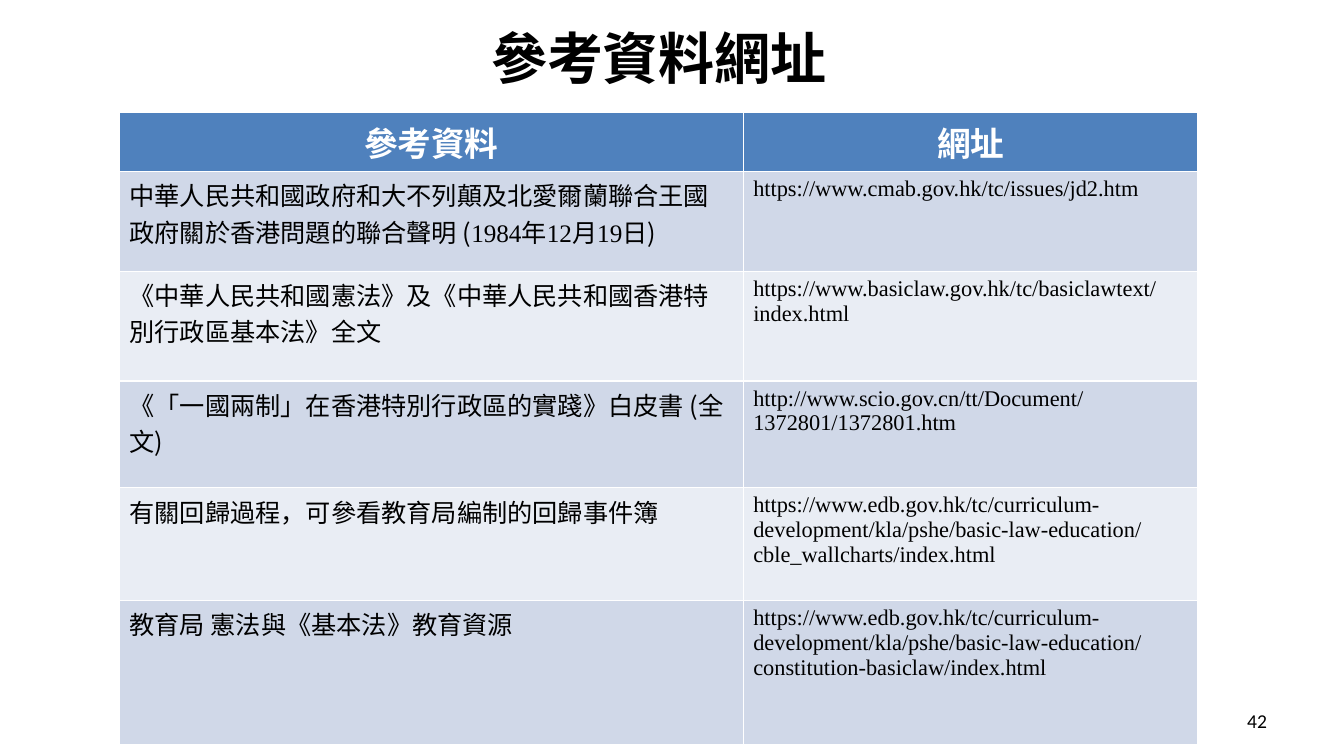
"""Build the slide of reference materials and their web addresses."""
from lxml import etree
from pptx import Presentation
from pptx.dml.color import RGBColor
from pptx.enum import text as t
from pptx.oxml import ns
from pptx.util import Cm, Pt

HAN, TIMES = "Noto Sans CJK SC", "Times New Roman"
TITLE = "參考資料網址"
HEADS = ["參考資料", "網址"]
ROWS = [
    ([("中華人民共和國政府和大不列顛及北愛爾蘭聯合王國政府關於香港問題的聯合聲明 (", HAN),
      ("1984年12月19日", TIMES), (")", HAN)],
     "https://www.cmab.gov.hk/tc/issues/jd2.htm"),
    ([("《中華人民共和國憲法》及《中華人民共和國香港特別行政區基本法》全文", HAN)],
     "https://www.basiclaw.gov.hk/tc/basiclawtext/index.html"),
    ([("《「一國兩制」在香港特別行政區的實踐》白皮書 (全文)", HAN)],
     "http://www.scio.gov.cn/tt/Document/1372801/1372801.htm"),
    ([("有關回歸過程，可參看教育局編制的回歸事件簿", HAN)],
     "https://www.edb.gov.hk/tc/curriculum-development/kla/pshe/basic-law-education/cble_wallcharts/index.html"),
    ([("教育局 憲法與《基本法》教育資源", HAN)],
     "https://www.edb.gov.hk/tc/curriculum-development/kla/pshe/basic-law-education/constitution-basiclaw/index.html"),
]
WIDTHS = [15.72, 11.46]
HEIGHTS = [1.27, 2.51, 2.77, 2.69, 2.84, 3.63]
BANDS = ["D0D8E8", "E9EDF4"]


def color(code):
    return RGBColor.from_string(code)


def write(para, parts, size, code="000000", bold=False, align=t.PP_ALIGN.LEFT):
    para.alignment = align
    for words, face in parts:
        run = para.add_run()
        run.text = words
        font = run.font
        font.name, font.size, font.bold = face, Pt(size), bold
        font.color.rgb = color(code)
        east = etree.SubElement(run._r.get_or_add_rPr(), ns.qn("a:ea"))
        east.set("typeface", HAN)


def fill(cell, code):
    cell.fill.solid()
    cell.fill.fore_color.rgb = color(code)


def build():
    deck = Presentation()
    deck.slide_width, deck.slide_height = Cm(33.87), Cm(19.05)
    slide = deck.slides.add_slide(deck.slide_layouts[5])

    title = slide.shapes.title
    title.left, title.top, title.width, title.height = Cm(8.64), Cm(0.58), Cm(15.93), Cm(1.57)
    frame = title.text_frame
    frame.auto_size = t.MSO_AUTO_SIZE.NONE
    frame.vertical_anchor = t.MSO_ANCHOR.TOP
    frame.margin_top = frame.margin_bottom = 0
    write(frame.paragraphs[0], [(TITLE, HAN)], 40, bold=True, align=t.PP_ALIGN.CENTER)

    table = slide.shapes.add_table(
        len(HEIGHTS), len(WIDTHS), Cm(3.01), Cm(2.84), Cm(sum(WIDTHS)), Cm(sum(HEIGHTS))).table
    for col, width in zip(table.columns, WIDTHS):
        col.width = Cm(width)
    for row, height in zip(table.rows, HEIGHTS):
        row.height = Cm(height)
    for c, head in enumerate(HEADS):
        cell = table.cell(0, c)
        fill(cell, "4F81BD")
        write(cell.text_frame.paragraphs[0], [(head, HAN)], 24, "FFFFFF", True, t.PP_ALIGN.CENTER)
    for r, (parts, link) in enumerate(ROWS):
        for c, (words, size) in enumerate([(parts, 18), ([(link, TIMES)], 16)]):
            cell = table.cell(r + 1, c)
            fill(cell, BANDS[r % 2])
            write(cell.text_frame.paragraphs[0], words, size)

    page = slide.shapes.add_textbox(Cm(24.28), Cm(17.65), Cm(7.9), Cm(1.02)).text_frame
    page.word_wrap = True
    page.vertical_anchor = t.MSO_ANCHOR.MIDDLE
    write(page.paragraphs[0], [("42", "Calibri")], 14, align=t.PP_ALIGN.RIGHT)
    deck.save("out.pptx")


if __name__ == "__main__":
    build()
